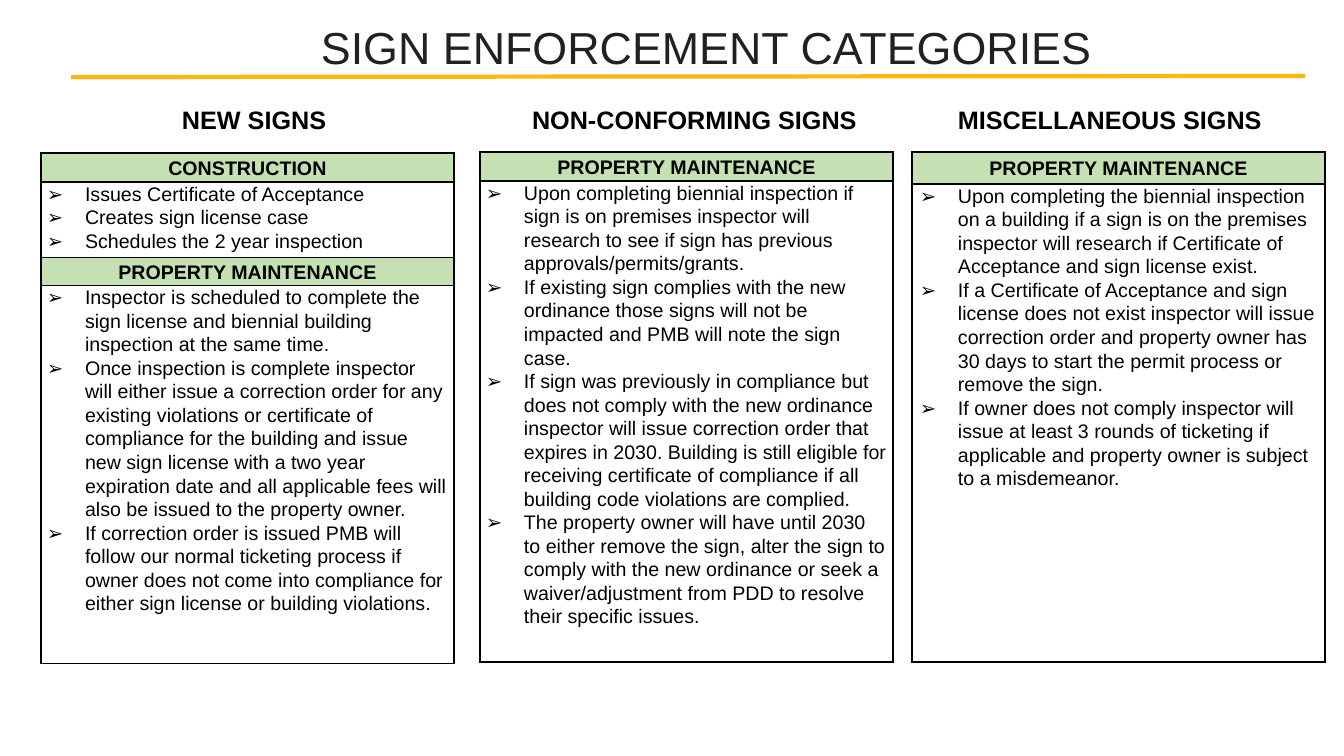
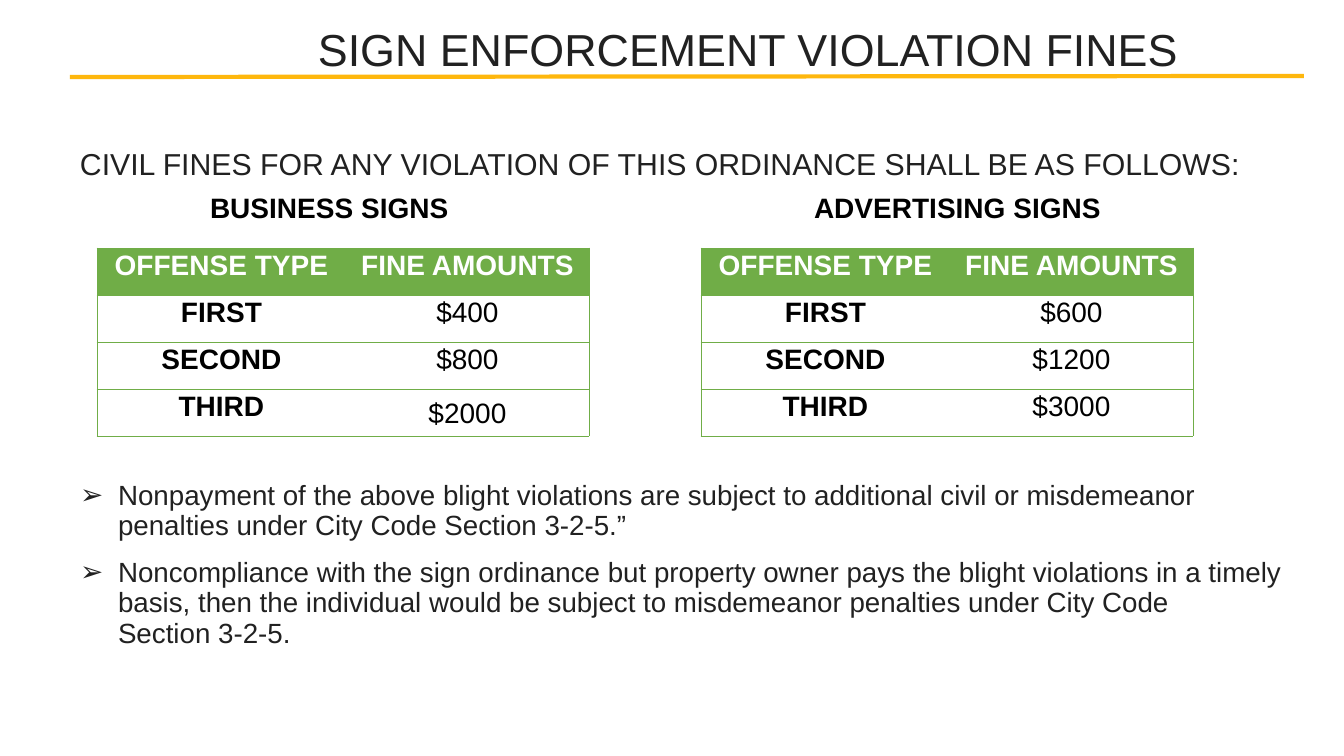
from lxml.etree import SubElement as Sub
from pptx import Presentation
from pptx.dml.color import RGBColor as Rgb
from pptx.enum.shapes import MSO_CONNECTOR as Conn
from pptx.enum.text import MSO_ANCHOR as Anchor, PP_ALIGN as Align
from pptx.oxml.ns import qn
from pptx.util import Emu, Pt

SCALE = 914400 / 100.8
INK = {"title": "212121", "text": "000000", "rule": "FEB70D", "pale": "C5E0B3",
       "green": "70AD47", "white": "FFFFFF"}
SIDES = {"L": "a:lnL", "R": "a:lnR", "T": "a:lnT", "B": "a:lnB"}


def px(num):
    return Emu(round(num * SCALE))


class Deck:
    font = "Arial"
    indent = 38

    def __init__(self):
        self.prs = Presentation()
        self.prs.slide_width, self.prs.slide_height = px(1344), px(756)
        self.slide = None

    # Slide with title and gold rule
    def page(self, title, x, y, left):
        self.slide = self.prs.slides.add_slide(self.prs.slide_layouts[6])
        self.text(x, y, 1000, 52, [title], 32, "title")
        self.rule(left, 77, left + 1234, 76)

    def rule(self, x1, y1, x2, y2):
        line = self.slide.shapes.add_connector(
            Conn.STRAIGHT, px(x1), px(y1), px(x2), px(y2))
        line.line.color.rgb = Rgb.from_string(INK["rule"])
        line.line.width = Pt(3)
        Sub(line._element.spPr, qn("a:effectLst"))

    # Text
    def fill(self, frame, lines, size, ink="text", bold=False, align=Align.LEFT,
             bullet=False, pitch=None, gap=0):
        for i, line in enumerate(lines):
            para = frame.add_paragraph() if i else frame.paragraphs[0]
            para.text = line
            para.alignment = align
            if bullet:
                props = para._p.get_or_add_pPr()
                props.set("marL", str(px(self.indent)))
                props.set("indent", str(-px(self.indent)))
                Sub(props, qn("a:buFont"), typeface=self.font)
                Sub(props, qn("a:buChar"), char="➢")
            if pitch:
                para.line_spacing = pitch
            if i and gap:
                para.space_before = Pt(gap)
            font = para.font
            font.name, font.size, font.bold = self.font, Pt(size), bold
            font.color.rgb = Rgb.from_string(INK[ink])

    def text(self, x, y, w, h, lines, size, ink="text", **style):
        frame = self.slide.shapes.add_textbox(px(x), px(y), px(w), px(h)).text_frame
        frame.word_wrap = True
        frame.margin_left = frame.margin_right = 0
        frame.margin_top = frame.margin_bottom = 0
        self.fill(frame, lines, size, ink, **style)

    # Tables
    def grid(self, x, y, cols, rows):
        table = self.slide.shapes.add_table(
            len(rows), len(cols), px(x), px(y), px(sum(cols)), px(sum(rows))).table
        table.first_row = table.horz_banding = False
        for col, w in zip(table.columns, cols):
            col.width = px(w)
        for row, h in zip(table.rows, rows):
            row.height = px(h)
        return table

    def cell(self, cell, lines, size, back, edge, width, pad, sides="LRTB",
             mid=False, **style):
        cell.margin_left = cell.margin_right = px(pad)
        cell.margin_top = cell.margin_bottom = 0
        cell.vertical_anchor = Anchor.MIDDLE if mid else Anchor.TOP
        self.fill(cell.text_frame, lines, size, pitch=1.07, **style)
        props = cell._tc.get_or_add_tcPr()
        for side, tag in SIDES.items():
            line = Sub(props, qn(tag), w=str(Pt(width)))
            if side in sides:
                Sub(Sub(line, qn("a:solidFill")), qn("a:srgbClr"), val=INK[edge])
            else:
                Sub(line, qn("a:noFill"))
        if back:
            cell.fill.solid()
            cell.fill.fore_color.rgb = Rgb.from_string(INK[back])
        else:
            cell.fill.background()

    def steps(self, x, y, rows, parts, pad):
        table = self.grid(x, y, [413], rows)
        for i, (head, items) in enumerate(parts):
            self.cell(table.cell(2 * i, 0), [head], 14, "pale", "text", 1, pad,
                      mid=True, bold=True, align=Align.CENTER)
            self.cell(table.cell(2 * i + 1, 0), items, 14, None, "text", 1, pad,
                      bullet=True)

    def fines(self, x, y, sums, low=()):
        names = ["OFFENSE TYPE", "FIRST", "SECOND", "THIRD"]
        table = self.grid(x, y, [249, 243], [47] * len(names))
        for r, pair in enumerate(zip(names, ["FINE AMOUNTS"] + sums)):
            for c, word in enumerate(pair):
                self.cell(table.cell(r, c), [word], 20, None if r else "green",
                          "green", 0.5, 7, sides="RTB" if c else "LTB",
                          mid=word in low, ink="text" if r else "white",
                          bold=not (r and c), align=Align.CENTER)


CARE = "PROPERTY MAINTENANCE"
NEW = [
    ("CONSTRUCTION", [
        "Issues Certificate of Acceptance",
        "Creates sign license case",
        "Schedules the 2 year inspection"]),
    (CARE, [
        "Inspector is scheduled to complete the sign license and biennial building "
        "inspection at the same time.",
        "Once inspection is complete inspector will either issue a correction order "
        "for any existing violations or certificate of compliance for the building "
        "and issue new sign license with a two year expiration date and all "
        "applicable fees will also be issued to the property owner.",
        "If correction order is issued PMB will follow our normal ticketing process "
        "if owner does not come into compliance for either sign license or building "
        "violations."])]
OLD = [
    (CARE, [
        "Upon completing biennial inspection if sign is on premises inspector will "
        "research to see if sign has previous approvals/permits/grants.",
        "If existing sign complies with the new ordinance those signs will not be "
        "impacted and PMB will note the sign case.",
        "If sign was previously in compliance but does not comply with the new "
        "ordinance inspector will issue correction order that expires in 2030. "
        "Building is still eligible for receiving certificate of compliance if all "
        "building code violations are complied.",
        "The property owner will have until 2030 to either remove the sign, alter "
        "the sign to comply with the new ordinance or seek a waiver/adjustment from "
        "PDD to resolve their specific issues."])]
MISC = [
    (CARE, [
        "Upon completing the biennial inspection on a building if a sign is on the "
        "premises inspector will research if Certificate of Acceptance and sign "
        "license exist.",
        "If a Certificate of Acceptance and sign license does not exist inspector "
        "will issue correction order and property owner has 30 days to start the "
        "permit process or remove the sign.",
        "If owner does not comply inspector will issue at least 3 rounds of "
        "ticketing if applicable and property owner is subject to a misdemeanor."])]
NOTES = [
    "Nonpayment of the above blight violations are subject to additional civil or "
    "misdemeanor penalties under City Code Section 3-2-5.”",
    "Noncompliance with the sign ordinance but property owner pays the blight "
    "violations in a timely basis, then the individual would be subject to "
    "misdemeanor penalties under City Code\vSection 3-2-5."]


def main():
    deck = Deck()

    # Categories
    deck.page("SIGN ENFORCEMENT CATEGORIES", 321, 20, 71)
    for x, head in [(182, "NEW SIGNS"), (532, "NON-CONFORMING SIGNS"),
                    (958, "MISCELLANEOUS SIGNS")]:
        deck.text(x, 104, 350, 29, [head], 18, bold=True)
    deck.steps(41, 153, [29, 75, 28, 378], NEW, 6)
    deck.steps(480, 152, [29, 481], OLD, 6)
    deck.steps(912, 152, [32, 478], MISC, 8)

    # Fines
    deck.page("SIGN ENFORCEMENT VIOLATION FINES", 318, 22, 70)
    deck.text(80, 145, 1210, 35,
              ["CIVIL FINES FOR ANY VIOLATION OF THIS ORDINANCE SHALL BE AS FOLLOWS:"],
              21.6, "title")
    for x, head, sums, low in [
            (97, "BUSINESS SIGNS", ["$400", "$800", "$2000"], ["$2000"]),
            (701, "ADVERTISING SIGNS", ["$600", "$1200", "$3000"], [])]:
        deck.text(x + 113, 191, 400, 32, [head], 20, bold=True)
        deck.fines(x, 248, sums, low)
    deck.text(80, 481, 1206, 165, NOTES, 19.8, "title", bullet=True, pitch=0.91, gap=12)

    deck.prs.save("out.pptx")


if __name__ == "__main__":
    main()
